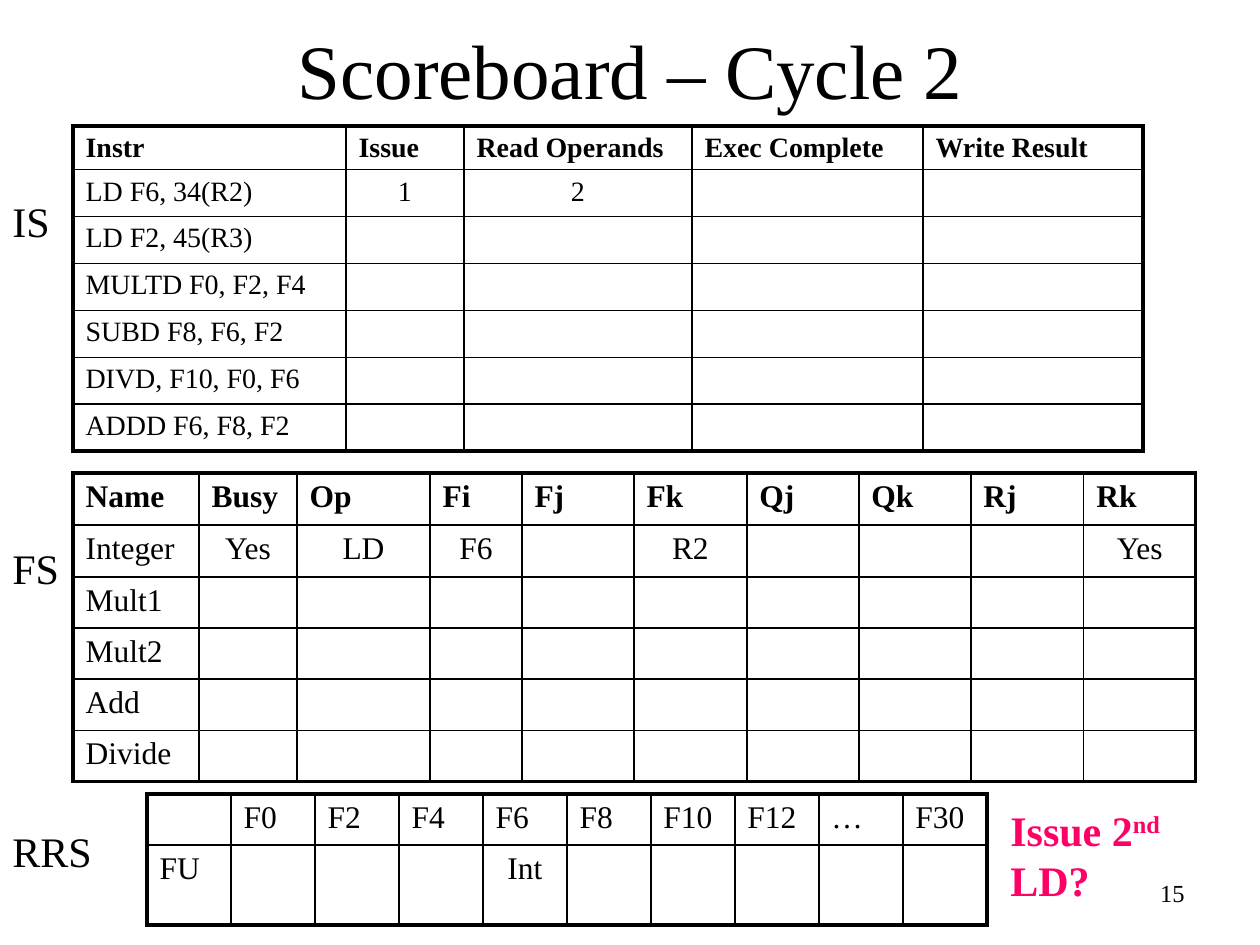
from dataclasses import dataclass

from lxml import etree
from pptx import Presentation
from pptx.dml.color import RGBColor
from pptx.enum.text import MSO_ANCHOR, MSO_AUTO_SIZE, PP_ALIGN
from pptx.oxml.ns import qn
from pptx.util import Emu, Pt

LEFT, CENTER, RIGHT = PP_ALIGN.LEFT, PP_ALIGN.CENTER, PP_ALIGN.RIGHT
MIDDLE = MSO_ANCHOR.MIDDLE
FIT_SHAPE = MSO_AUTO_SIZE.SHAPE_TO_FIT_TEXT
PX_PER_INCH = 126
TITLE_ONLY = 5
FONT = "Times New Roman"
COLORS = {"ink": "000000", "question": "FF0066"}
OUTER_PT, INNER_PT = 2.25, 1


@dataclass
class Grid:
    left: int
    top: int
    columns: list[int]
    rows: list[int]
    size: int
    header_bold: bool
    labels: list[list[str]]
    centered: dict[tuple[int, int], str]


@dataclass
class Label:
    text: str
    left: int
    top: int
    width: int
    height: int
    size: int = 24
    align: PP_ALIGN = LEFT
    wrap: bool = False


INSTRUCTIONS = Grid(
    73, 126, [273, 118, 228, 231, 220], [43, 44, 44, 47, 43, 44, 44], 16, True,
    [["Instr", "Issue", "Read Operands", "Exec Complete", "Write Result"],
     ["LD F6, 34(R2)"], ["LD F2, 45(R3)"], ["MULTD F0, F2, F4"],
     ["SUBD F8, F6, F2"], ["DIVD, F10, F0, F6"], ["ADDD F6, F8, F2"]],
    {(1, 1): "1", (1, 2): "2"},
)
FUNCTIONAL_UNITS = Grid(
    73, 473, [126, 98, 133, 92] + [112, 113, 112] * 2, [52, 52] + [48] * 4, 18, True,
    [["Name", "Busy", "Op", "Fi", "Fj", "Fk", "Qj", "Qk", "Rj", "Rk"],
     ["Integer"], ["Mult1"], ["Mult2"], ["Add"], ["Divide"]],
    {(1, 1): "Yes", (1, 2): "LD", (1, 3): "F6", (1, 5): "R2", (1, 9): "Yes"},
)
REGISTER_RESULTS = Grid(
    147, 794, [84] * 10, [47, 80], 18, False,
    [["", "F0", "F2", "F4", "F6", "F8", "F10", "F12", "…", "F30"], ["FU"]],
    {(1, 4): "Int"},
)
LABELS = [
    Label("IS", 0, 189, 63, 63),
    Label("FS", 0, 536, 72, 63),
    Label("RRS", 0, 819, 105, 63),
    Label("15", 935, 872, 262, 63, size=14, align=RIGHT, wrap=True),
]


def px(length: int) -> Emu:
    return Emu(round(length * 914400 / PX_PER_INCH))


def style_run(run, size: int, bold: bool = False, color: str = "ink") -> None:
    run.font.name = FONT
    run.font.size = Pt(size)
    run.font.bold = bold
    run.font.color.rgb = RGBColor.from_string(COLORS[color])


def set_borders(cell, widths: dict[str, float]) -> None:
    properties = cell._tc.get_or_add_tcPr()
    for side, width in widths.items():
        line = etree.SubElement(properties, qn(f"a:ln{side}"), w=str(Pt(width)))
        fill = etree.SubElement(line, qn("a:solidFill"))
        etree.SubElement(fill, qn("a:srgbClr"), val=COLORS["ink"])


def fill_cell(cell, text: str, size: int, bold: bool, align: PP_ALIGN) -> None:
    paragraph = cell.text_frame.paragraphs[0]
    paragraph.alignment = align
    if text:
        paragraph.text = text
        style_run(paragraph.runs[0], size, bold)
    else:
        # An empty cell takes its line height from the paragraph end mark.
        etree.SubElement(paragraph._p, qn("a:endParaRPr"), sz=str(size * 100))


def draw_grid(slide, grid: Grid) -> None:
    last_row, last_column = len(grid.rows) - 1, len(grid.columns) - 1
    table = slide.shapes.add_table(
        len(grid.rows), len(grid.columns), px(grid.left), px(grid.top),
        px(sum(grid.columns)), px(sum(grid.rows))).table
    table.first_row = table.horz_banding = False
    for column, width in zip(table.columns, grid.columns):
        column.width = px(width)
    for r, height in enumerate(grid.rows):
        table.rows[r].height = px(height)
        for c in range(len(grid.columns)):
            cell = table.cell(r, c)
            edges = {"L": c == 0, "R": c == last_column, "T": r == 0, "B": r == last_row}
            set_borders(cell, {side: OUTER_PT if outer else INNER_PT
                               for side, outer in edges.items()})
            cell.fill.background()
            is_value = (r, c) in grid.centered
            label = grid.labels[r][c] if c < len(grid.labels[r]) else ""
            fill_cell(cell, grid.centered.get((r, c), label), grid.size,
                      grid.header_bold and r == 0, CENTER if is_value else LEFT)


def add_label(slide, label: Label) -> None:
    box = slide.shapes.add_textbox(
        px(label.left), px(label.top), px(label.width), px(label.height))
    frame = box.text_frame
    frame.word_wrap = label.wrap
    frame.text = label.text
    frame.paragraphs[0].alignment = label.align
    style_run(frame.paragraphs[0].runs[0], label.size)


def add_question(slide) -> None:
    frame = slide.shapes.add_textbox(px(998), px(798), px(262), px(113)).text_frame
    frame.word_wrap = True
    frame.auto_size = FIT_SHAPE
    for text, baseline in (("Issue 2", 0), ("nd", 30000), (" LD?", 0)):
        run = frame.paragraphs[0].add_run()
        run.text = text
        style_run(run, 24, bold=True, color="question")
        if baseline:
            run._r.get_or_add_rPr().set("baseline", str(baseline))


def add_title(slide) -> None:
    title = slide.shapes.title
    title.left, title.top, title.width, title.height = px(95), px(-10), px(1071), px(158)
    frame = title.text_frame
    frame.text = "Scoreboard – Cycle 2"
    frame.vertical_anchor = MIDDLE
    frame.paragraphs[0].alignment = CENTER
    style_run(frame.paragraphs[0].runs[0], 44)


def main() -> None:
    deck = Presentation()
    deck.slide_width, deck.slide_height = px(1260), px(945)
    slide = deck.slides.add_slide(deck.slide_layouts[TITLE_ONLY])
    add_title(slide)
    for grid in (INSTRUCTIONS, FUNCTIONAL_UNITS, REGISTER_RESULTS):
        draw_grid(slide, grid)
    for label in LABELS:
        add_label(slide, label)
    add_question(slide)
    deck.save("out.pptx")


if __name__ == "__main__":
    main()
